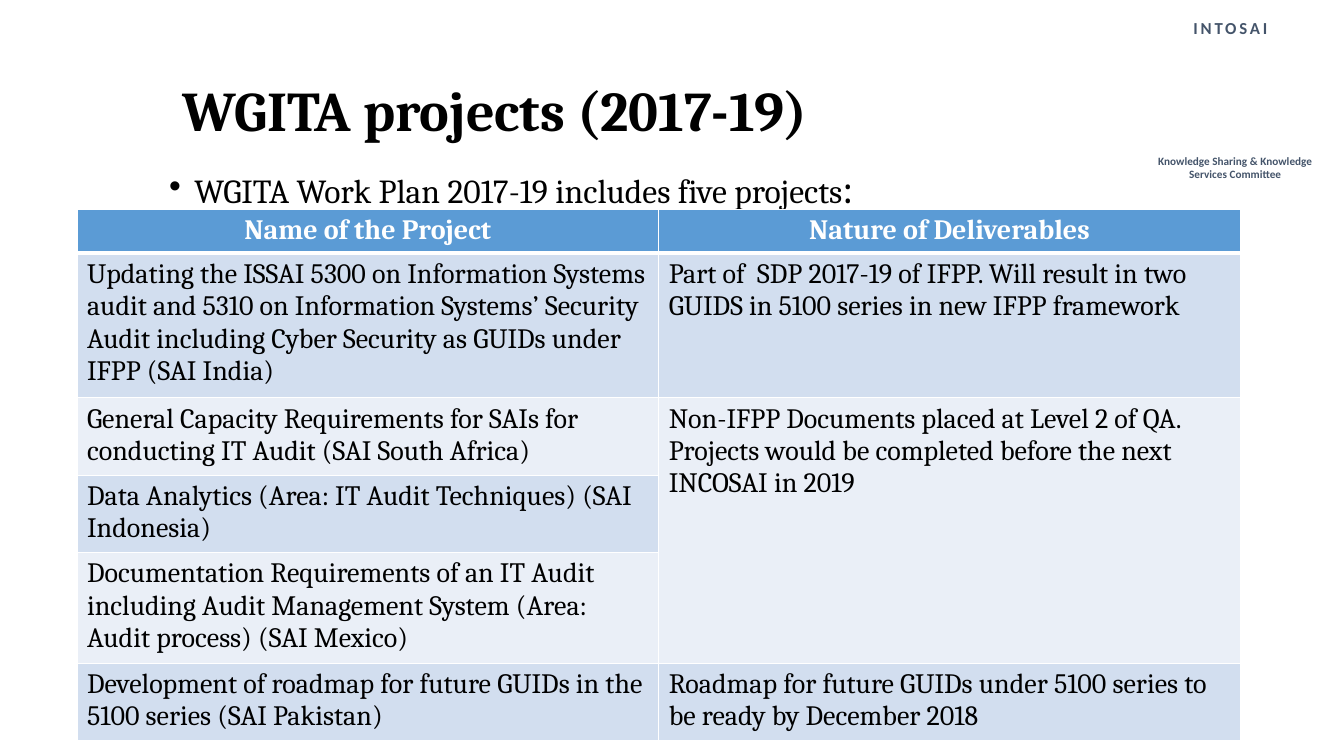
"""Build the slide listing the WGITA projects of 2017-19."""
from dataclasses import dataclass

from lxml import etree
from pptx import Presentation
from pptx.dml.color import RGBColor
from pptx.enum.text import MSO_ANCHOR, MSO_AUTO_SIZE, PP_ALIGN
from pptx.oxml.ns import qn
from pptx.util import Cm, Pt

LEFT, CENTER = PP_ALIGN.LEFT, PP_ALIGN.CENTER
TOP, MIDDLE = MSO_ANCHOR.TOP, MSO_ANCHOR.MIDDLE
NO_AUTOFIT = MSO_AUTO_SIZE.NONE
TITLE_ONLY = 5
SERIF, SANS = "Cambria", "Calibri"
BLACK, WHITE, SLATE = "000000", "FFFFFF", "44546A"
HEADER_BLUE, BANDS = "5B9BD5", ("D2DEEF", "EAEFF7")
HEADER_HEIGHT, COLUMN_WIDTH = 1.05, 14.66


@dataclass(frozen=True)
class Label:
    """A master label, with lengths in centimetres."""
    text: str
    left: float
    top: float
    width: float
    height: float
    size: float
    spacing: int = 0


@dataclass(frozen=True)
class Project:
    """A table row; without deliverables it shares the cell above."""
    name: str
    height: float
    deliverables: str = ""


LABELS = (
    Label("INTOSAI", 28.98, 0.33, 4.06, 0.76, 12, 200),
    Label("Knowledge Sharing & Knowledge Services Committee", 28.5, 3.76, 5.26, 0.94, 8),
)
PROJECTS = (
    Project("Updating the ISSAI 5300 on Information Systems audit and 5310 on Information "
            "Systems’ Security Audit including Cyber Security as GUIDs under IFPP (SAI India)",
            3.52, "Part of  SDP 2017-19 of IFPP. Will result in two GUIDS in 5100 series "
            "in new IFPP framework"),
    Project("General Capacity Requirements for SAIs for conducting IT Audit (SAI South Africa)",
            1.88, "Non-IFPP Documents placed at Level 2 of QA.\n"
            "Projects would be completed before the next INCOSAI in 2019"),
    Project("Data Analytics (Area: IT Audit Techniques) (SAI Indonesia)", 1.88),
    Project("Documentation Requirements of an IT Audit including Audit Management System "
            "(Area: Audit process) (SAI Mexico)", 2.7),
    Project("Development of roadmap for future GUIDs in the 5100 series (SAI Pakistan)",
            1.88, "Roadmap for future GUIDs under 5100 series to be ready by December 2018"),
)


def rgb(color: str) -> RGBColor:
    """Turn a hex string into a colour."""
    return RGBColor.from_string(color)


def apply(target, values: dict) -> None:
    """Set each named attribute on the target."""
    for name, value in values.items():
        setattr(target, name, value)


def format_font(font, size: float, color: str, name: str = SERIF, bold: bool = False) -> None:
    """Give a font its face, size, weight and colour."""
    apply(font, {"name": name, "size": Pt(size), "bold": bold})
    font.color.rgb = rgb(color)


def add_label(slide, label: Label) -> None:
    """Add one centred master label."""
    box = slide.shapes.add_textbox(
        Cm(label.left), Cm(label.top), Cm(label.width), Cm(label.height))
    box.text_frame.word_wrap = True
    paragraph = box.text_frame.paragraphs[0]
    paragraph.alignment = CENTER
    run = paragraph.add_run()
    run.text = label.text
    format_font(run.font, label.size, SLATE, SANS, True)
    if label.spacing:
        run.font._element.set("spc", str(label.spacing))


def format_title(slide) -> None:
    """Place and write the slide title."""
    title = slide.shapes.title
    apply(title, {"left": Cm(4.34), "top": Cm(1.02), "width": Cm(27.2), "height": Cm(3.68)})
    apply(title.text_frame, {"text": "WGITA projects (2017-19)", "word_wrap": True,
                             "vertical_anchor": MIDDLE, "auto_size": NO_AUTOFIT})
    paragraph = title.text_frame.paragraphs[0]
    apply(paragraph, {"alignment": LEFT, "line_spacing": 0.9})
    format_font(paragraph.runs[0].font, 40, BLACK, bold=True)


def add_introduction(slide) -> None:
    """Add the bulleted line above the table."""
    box = slide.shapes.add_textbox(Cm(4.01), Cm(3.68), Cm(24), Cm(1.7))
    apply(box.text_frame, {"word_wrap": True, "vertical_anchor": TOP})
    paragraph = box.text_frame.paragraphs[0]
    properties = paragraph._p.get_or_add_pPr()
    properties.set("marL", str(Cm(0.64)))
    properties.set("indent", str(-Cm(0.64)))
    etree.SubElement(properties, qn("a:buFont"), typeface="Arial")
    etree.SubElement(properties, qn("a:buChar"), char="•")
    paragraph.line_spacing = 1.2
    for text, size in (("WGITA Work Plan 2017-19 includes five projects", 24), (":", 30)):
        run = paragraph.add_run()
        run.text = text
        format_font(run.font, size, BLACK)


def add_borders(cell, bottom: float) -> None:
    """Draw the white cell borders, with widths in points."""
    properties = cell._tc.get_or_add_tcPr()
    widths = {"lnL": 1, "lnR": 1, "lnT": 1, "lnB": bottom}
    for position, (side, width) in enumerate(widths.items()):
        line = etree.Element(qn(f"a:{side}"), w=str(Pt(width)))
        fill = etree.SubElement(line, qn("a:solidFill"))
        etree.SubElement(fill, qn("a:srgbClr"), val=WHITE)
        properties.insert(position, line)


def fill_cell(cell, text: str, fill: str, header: bool = False) -> None:
    """Write and format one table cell."""
    cell.fill.solid()
    cell.fill.fore_color.rgb = rgb(fill)
    add_borders(cell, 3 if header else 1)
    cell.text = text
    for paragraph in cell.text_frame.paragraphs:
        paragraph.alignment = CENTER if header else LEFT
        format_font(paragraph.font, 20, WHITE if header else BLACK, bold=header)
        for run in paragraph.runs:
            format_font(run.font, 20, WHITE if header else BLACK, bold=header)


def add_project_table(slide) -> None:
    """Add the table of projects and deliverables."""
    heights = [HEADER_HEIGHT] + [project.height for project in PROJECTS]
    table = slide.shapes.add_table(len(heights), 2, Cm(1.94), Cm(5.28),
                                   Cm(2 * COLUMN_WIDTH), Cm(sum(heights))).table
    for column in table.columns:
        column.width = Cm(COLUMN_WIDTH)
    for row, height in zip(table.rows, heights):
        row.height = Cm(height)
    for column, heading in enumerate(("Name of the Project", "Nature of Deliverables")):
        fill_cell(table.cell(0, column), heading, HEADER_BLUE, header=True)
    shared_row, shared_band = 1, BANDS[0]
    for row, project in enumerate(PROJECTS, start=1):
        band = BANDS[(row - 1) % 2]
        if project.deliverables:
            shared_row, shared_band = row, band
        fill_cell(table.cell(row, 0), project.name, band)
        fill_cell(table.cell(row, 1), project.deliverables, shared_band)
        if row < len(PROJECTS) and PROJECTS[row].deliverables and shared_row < row:
            table.cell(shared_row, 1).merge(table.cell(row, 1))


def main() -> None:
    """Build and save the slide."""
    presentation = Presentation()
    apply(presentation, {"slide_width": Cm(33.87), "slide_height": Cm(19.05)})
    slide = presentation.slides.add_slide(presentation.slide_layouts[TITLE_ONLY])
    for label in LABELS:
        add_label(slide, label)
    format_title(slide)
    add_introduction(slide)
    add_project_table(slide)
    presentation.save("out.pptx")


if __name__ == "__main__":
    main()
